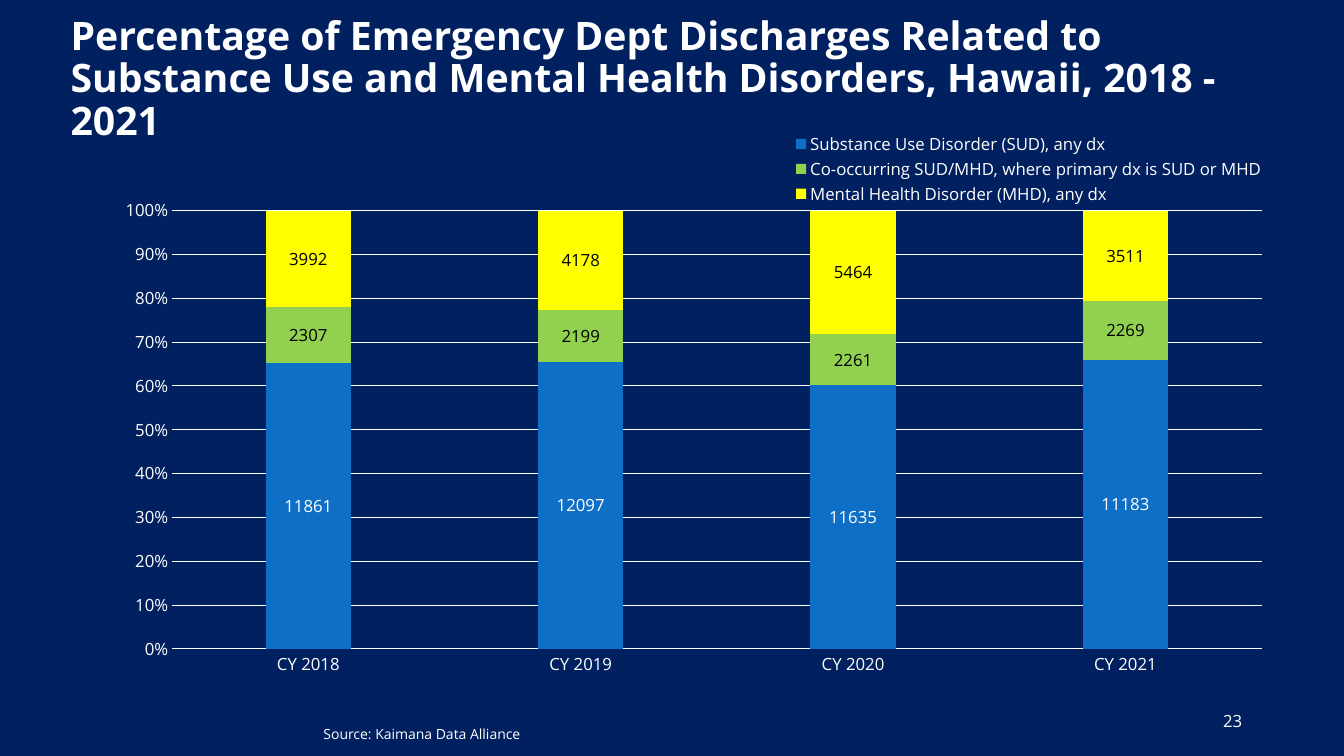
from dataclasses import dataclass
from typing import Any

from pptx import Presentation
from pptx.chart.data import CategoryChartData
from pptx.dml.color import RGBColor
from pptx.enum.chart import XL_CHART_TYPE, XL_LABEL_POSITION, XL_LEGEND_POSITION, XL_TICK_MARK
from pptx.enum.text import MSO_ANCHOR, MSO_AUTO_SIZE, PP_ALIGN
from pptx.oxml import parse_xml
from pptx.oxml.ns import nsdecls
from pptx.util import Inches, Pt

HUES = {
    "navy": "002060", "white": "FFFFFF", "black": "000000",
    "blue": "0F6FC6", "green": "92D050", "yellow": "FFFF00",
}
FACE = "Open Sans"
YEARS = [f"CY {year}" for year in range(2018, 2022)]

Box = tuple[float, float, float, float]


@dataclass
class Band:
    name: str
    vals: tuple[int, ...]
    fill: str
    ink: str


@dataclass
class Note:
    text: str
    box: Box
    size: int
    align: PP_ALIGN
    anchor: MSO_ANCHOR


BANDS = [
    Band("Substance Use Disorder (SUD), any dx",
         (11861, 12097, 11635, 11183), "blue", "white"),
    Band("Co-occurring SUD/MHD, where primary dx is SUD or MHD",
         (2307, 2199, 2261, 2269), "green", "black"),
    Band("Mental Health Disorder (MHD), any dx",
         (3992, 4178, 5464, 3511), "yellow", "black"),
]
NOTES = [
    Note("23", (9.42, 6.95, 3, 0.4), 12, PP_ALIGN.RIGHT, MSO_ANCHOR.MIDDLE),
    Note("Source: Kaimana Data Alliance", (3.11, 7.15, 4.56, 0.27), 10,
         PP_ALIGN.LEFT, MSO_ANCHOR.TOP),
]
TITLE = ("Percentage of Emergency Dept Discharges Related to Substance Use "
         "and Mental Health Disorders, Hawaii, 2018 - 2021")


def hue(name: str) -> RGBColor:
    return RGBColor.from_string(HUES[name])


def apply(item: Any, vals: dict[str, Any]) -> None:
    for key, val in vals.items():
        setattr(item, key, val)


def style(font: Any, size: int, ink: str = "white", bold: bool = False) -> None:
    apply(font, {"name": FACE, "size": Pt(size), "bold": bold})
    font.color.rgb = hue(ink)


def rule(line: Any) -> None:
    line.color.rgb = hue("white")
    line.width = Pt(0.75)


def place(shape: Any, box: Box) -> None:
    apply(shape, dict(zip(("left", "top", "width", "height"), map(Inches, box))))


def layout(node: Any, spot: int, box: Box, inner: bool = False) -> None:
    for old in node.xpath("c:layout"):
        node.remove(old)
    target = '<c:layoutTarget val="inner"/>' if inner else ""
    modes = "".join(f'<c:{key}Mode val="edge"/>' for key in "xy")
    sizes = "".join(f'<c:{key} val="{val}"/>' for key, val in zip("xywh", box))
    node.insert(spot, parse_xml(
        f'<c:layout {nsdecls("c")}><c:manualLayout>{target}{modes}{sizes}'
        "</c:manualLayout></c:layout>"))


def head(slide: Any) -> None:
    title = slide.shapes.title
    place(title, (0.6, 0.07, 12.12, 1.45))
    frame = title.text_frame
    apply(frame, {"text": TITLE, "word_wrap": True, "auto_size": MSO_AUTO_SIZE.NONE,
                  "vertical_anchor": MSO_ANCHOR.MIDDLE})
    para = frame.paragraphs[0]
    apply(para, {"alignment": PP_ALIGN.LEFT, "line_spacing": 0.9})
    style(para.runs[0].font, 28, bold=True)


def graph(slide: Any) -> None:
    data = CategoryChartData()
    data.categories = YEARS
    for band in BANDS:
        data.add_series(band.name, band.vals)
    box = map(Inches, (0.65, 1.28, 12.02, 5.62))
    chart = slide.shapes.add_chart(
        XL_CHART_TYPE.COLUMN_STACKED_100, *box, data).chart
    apply(chart, {"has_title": False, "has_legend": True})
    style(chart.font, 10)

    plot = chart.plots[0]
    apply(plot, {"gap_width": 219, "overlap": 100, "vary_by_categories": False})
    for band, bars in zip(BANDS, plot.series):
        bars.format.fill.solid()
        bars.format.fill.fore_color.rgb = hue(band.fill)
        tags = bars.data_labels
        apply(tags, {"show_value": True, "position": XL_LABEL_POSITION.CENTER})
        style(tags.font, 12, band.ink)

    for axis in (chart.category_axis, chart.value_axis):
        apply(axis, {"major_tick_mark": XL_TICK_MARK.NONE,
                     "minor_tick_mark": XL_TICK_MARK.NONE})
        style(axis.tick_labels.font, 12)
    rule(chart.category_axis.format.line)
    scale = chart.value_axis
    apply(scale, {"has_major_gridlines": True, "minimum_scale": 0,
                  "maximum_scale": 1, "major_unit": 0.1})
    apply(scale.tick_labels, {"number_format": "0%", "number_format_is_linked": False})
    scale.format.line.fill.background()
    rule(scale.major_gridlines.format.line)

    key = chart.legend
    apply(key, {"position": XL_LEGEND_POSITION.BOTTOM, "include_in_layout": False})
    style(key.font, 12)
    root = chart.element
    layout(root.xpath("c:chart/c:plotArea")[0], 0, (0.088, 0.144, 0.899, 0.774), True)
    layout(root.xpath("c:chart/c:legend")[0], 1, (0.6, 0.003, 0.39, 0.135))


def write(slide: Any, note: Note) -> None:
    frame = slide.shapes.add_textbox(*map(Inches, note.box)).text_frame
    apply(frame, {"text": note.text, "word_wrap": True, "vertical_anchor": note.anchor})
    para = frame.paragraphs[0]
    para.alignment = note.align
    style(para.runs[0].font, note.size)


def main() -> None:
    deck = Presentation()
    apply(deck, {"slide_width": Inches(13.33), "slide_height": Inches(7.5)})
    slide = deck.slides.add_slide(deck.slide_layouts[5])
    fill = slide.background.fill
    fill.solid()
    fill.fore_color.rgb = hue("navy")
    head(slide)
    graph(slide)
    for note in NOTES:
        write(slide, note)
    deck.save("out.pptx")


if __name__ == "__main__":
    main()
